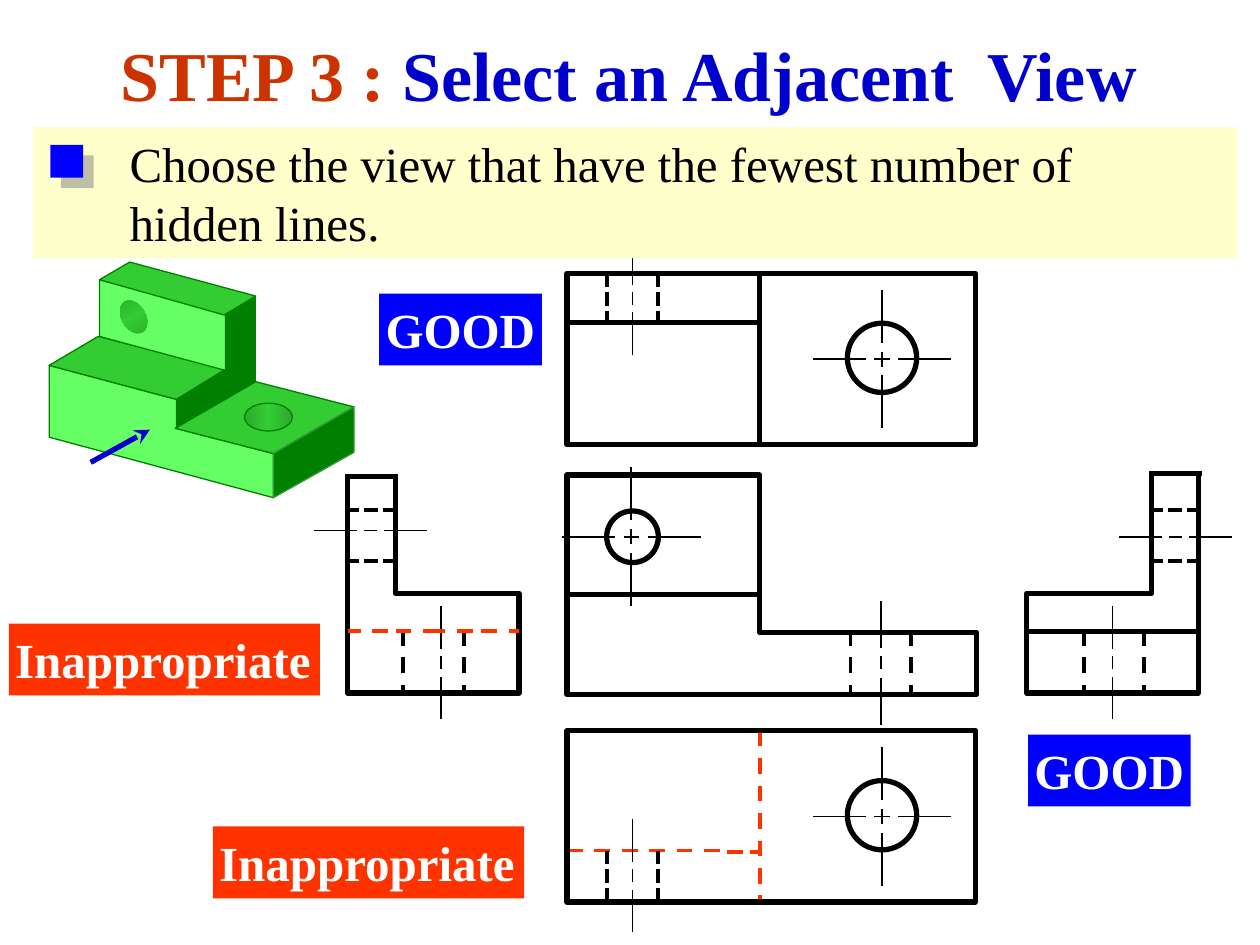
import copy

import lxml.etree
import pptx
import pptx.dml.color
import pptx.enum.dml
import pptx.enum.shapes
import pptx.enum.text
import pptx.oxml.ns
import pptx.util

Inches = pptx.util.Inches
Pt = pptx.util.Pt
qn = pptx.oxml.ns.qn
KIND = pptx.enum.shapes.MSO_SHAPE
FONT = "Times New Roman"
BLACK, WHITE, RED, BLUE, NAVY = "000000", "FFFFFF", "FF3300", "0000FF", "0000CC"
DARK, MID, LIGHT, EDGE = "008000", "33CC33", "66FF66", "339933"
SMALL, LARGE = (0.05, 0.11, 0.45), (0.06, 0.13, 0.55)


def color(code):
    return pptx.dml.color.RGBColor.from_string(code)


def paint(shape, fill=None, edge=None, width=3):
    shape.shadow.inherit = False
    if fill:
        shape.fill.solid()
        shape.fill.fore_color.rgb = color(fill)
    else:
        shape.fill.background()
    if edge:
        shape.line.color.rgb = color(edge)
        shape.line.width = Pt(width)
    else:
        shape.line.fill.background()
    return shape


def solid(slide, kind, box, **style):
    return paint(slide.shapes.add_shape(kind, *map(Inches, box)), **style)


def outline(slide, points, close=True, **style):
    spots = [(Inches(x), Inches(y)) for x, y in points]
    builder = slide.shapes.build_freeform(*spots[0])
    builder.add_line_segments(spots[1:], close=close)
    return paint(builder.convert_to_shape(), **style)


def frame(slide, left, top, right, bottom):
    outline(slide, [(left, bottom), (left, top), (right, top), (right, bottom)],
            edge=BLACK)


def line(slide, x1, y1, x2, y2, code=BLACK, width=3.0, dash=False):
    link = slide.shapes.add_connector(
        pptx.enum.shapes.MSO_CONNECTOR.STRAIGHT, *map(Inches, (x1, y1, x2, y2)))
    link.line.color.rgb = color(code)
    link.line.width = Pt(width)
    if dash:
        link.line.dash_style = pptx.enum.dml.MSO_LINE.DASH
    lxml.etree.SubElement(link._element.spPr, qn("a:effectLst"))
    return link


def axis(slide, x, y, size, across=False):
    core, gap, reach = size
    for start, end in ((-core, core), (-gap, -reach), (reach, gap)):
        if across:
            line(slide, x + start, y, x + end, y, width=1)
        else:
            line(slide, x, y + start, x, y + end, width=1)


def cross(slide, x, y):
    axis(slide, x, y, LARGE)
    axis(slide, x, y, LARGE, across=True)


def ring(slide, x, y, size):
    solid(slide, KIND.OVAL, (x - size / 2, y - size / 2, size, size), edge=BLACK)


def ticks(slide, x, y, across=False, sign=1):
    for start, end in ((0, 0.11), (0.15, 0.26), (0.3, 0.4)):
        start, end = start * sign, end * sign
        if across:
            line(slide, x + start, y, x + end, y, width=2.25)
        else:
            line(slide, x, y + start, x, y + end, width=2.25)


def bore(slide, left, right, mid, size=SMALL):
    for x in (left, right):
        line(slide, x, 5, x, 5.49, width=2.25, dash=True)
    axis(slide, mid, 5.26, size)


def write(para, text, size, code, bold=False):
    run = para.add_run()
    run.text = text
    run.font.name = FONT
    run.font.size = Pt(size)
    run.font.bold = bold
    run.font.color.rgb = color(code)


def label(slide, text, left, top, width, fill):
    frame = solid(slide, KIND.RECTANGLE, (left, top, width, 0.57), fill=fill).text_frame
    frame.margin_left = frame.margin_right = Inches(0.05)
    frame.margin_top = frame.margin_bottom = Inches(0.05)
    frame.word_wrap = False
    frame.vertical_anchor = pptx.enum.text.MSO_ANCHOR.TOP
    para = frame.paragraphs[0]
    para.alignment = pptx.enum.text.PP_ALIGN.LEFT
    write(para, text, 28, WHITE, True)


def title(slide):
    head = slide.shapes.title
    head.left, head.top, head.width, head.height = map(Inches, (-0.01, 0.2, 10, 0.77))
    frame = head.text_frame
    frame.word_wrap = True
    frame.auto_size = pptx.enum.text.MSO_AUTO_SIZE.NONE
    frame.vertical_anchor = pptx.enum.text.MSO_ANCHOR.TOP
    para = frame.paragraphs[0]
    para.alignment = pptx.enum.text.PP_ALIGN.CENTER
    write(para, "STEP 3 : ", 40, "CC3300", True)
    write(para, "Select an Adjacent  View", 40, NAVY, True)


def front(slide):
    ring(slide, 5.02, 4.26, 0.41)
    outline(slide, [(4.5, 3.77), (4.5, 5.51), (7.75, 5.51), (7.75, 5.02),
                    (6.03, 5.02), (6.03, 3.77)], edge=BLACK)
    line(slide, 4.5, 4.72, 6.03, 4.72)
    bore(slide, 6.75, 7.23, 6.99, (0.05, 0.12, 0.49))
    cross(slide, 5.01, 4.26)


def plan(slide, top, edge):
    frame(slide, 4.5, top, 7.74, top + 1.36)
    for x in (4.82, 5.22):
        ticks(slide, x, edge)
    axis(slide, 5.02, edge + 0.2, SMALL)
    ring(slide, 7, top + 0.67, 0.55)
    cross(slide, 7, top + 0.68)


def side(slide, back, step, face, hole, sign):
    outline(slide, [(step, 3.76), (step, 4.71), (face, 4.71), (face, 5.5),
                    (back, 5.5), (back, 3.76)], close=False, edge=BLACK)
    for y in (4.05, 4.45):
        ticks(slide, back - 0.02 * sign, y, True, sign)
    axis(slide, back + 0.18 * sign, hole, SMALL, across=True)


def hollow(slide, box, turn=0, **style):
    oval = solid(slide, KIND.OVAL, box, **style)
    oval.rotation = turn
    oval.fill.gradient()
    oval.fill.gradient_angle = 0
    stops = oval.fill.gradient_stops
    for stop, place, code in zip(stops, (0, 0.5), ("2BAB2B", MID)):
        stop.position = place
        stop.color.rgb = color(code)
    row = oval._element.spPr.find(".//" + qn("a:gsLst"))
    last = copy.deepcopy(row[0])
    last.set("pos", "100000")
    row.append(last)


def block(slide):
    faces = [
        (DARK, None, [(1.39, 3.4), (1.39, 3.16), (1.79, 2.93), (1.79, 2.48),
                      (2.03, 2.35), (2.03, 3.03)]),
        (LIGHT, DARK, [(2.17, 3.95), (0.39, 3.47), (0.39, 2.9), (1.4, 3.17),
                       (1.4, 3.4), (2.17, 3.6)]),
        (MID, DARK, [(0.39, 2.9), (0.78, 2.67), (1.79, 2.93), (1.4, 3.17)]),
        (LIGHT, DARK, [(1.79, 2.94), (0.79, 2.67), (0.79, 2.22), (1.79, 2.49)]),
        (MID, DARK, [(1.39, 3.4), (2.17, 3.6), (2.81, 3.23), (2.03, 3.03)]),
        (DARK, EDGE, [(2.17, 3.6), (2.17, 3.95), (2.81, 3.59), (2.81, 3.23)]),
        (MID, DARK, [(2.03, 2.35), (1.03, 2.08), (0.79, 2.22), (1.78, 2.5)]),
    ]
    for fill, edge, points in faces:
        outline(slide, points, fill=fill, edge=edge, width=0.75)
    arrow = line(slide, 0.72, 3.67, 1.19, 3.41, NAVY)
    lxml.etree.SubElement(arrow.line._get_or_add_ln(), qn("a:tailEnd"), type="stealth")
    hollow(slide, (0.92, 2.42, 0.28, 0.19), 60)
    hollow(slide, (1.94, 3.2, 0.38, 0.22), edge=DARK, width=0.75)


def banner(slide):
    solid(slide, KIND.RECTANGLE, (0.26, 1.01, 9.56, 1.04), fill="FFFFCC")
    box = slide.shapes.add_textbox(*map(Inches, (0.93, 1.01, 7.76, 1.04)))
    box.text_frame.word_wrap = False
    para = box.text_frame.paragraphs[0]
    write(para, "Choose the view that have the fewest number of", 28, BLACK)
    para.add_line_break()
    write(para, "hidden lines.", 28, BLACK)
    mark = solid(slide, KIND.RECTANGLE, (0.4, 1.15, 0.26, 0.26), fill=BLUE)
    shade = lxml.etree.SubElement(
        mark._element.spPr.find(qn("a:effectLst")), qn("a:outerShdw"),
        blurRad="0", dist=str(Pt(8.5)), dir="2700000", algn="ctr", rotWithShape="0")
    tone = lxml.etree.SubElement(shade, qn("a:srgbClr"), val="808080")
    lxml.etree.SubElement(tone, qn("a:alpha"), val="50000")


def main():
    deck = pptx.Presentation()
    deck.slide_width, deck.slide_height = Inches(10), Inches(7.5)
    slide = deck.slides.add_slide(deck.slide_layouts[5])
    title(slide)
    front(slide)
    label(slide, "GOOD", 3.01, 2.33, 1.29, BLUE)
    line(slide, 6.03, 5.8, 6.03, 7.16, RED, 2.25, True)
    line(slide, 4.5, 2.56, 6.03, 2.56)
    line(slide, 6.03, 2.17, 6.03, 3.53)
    plan(slide, 2.17, 2.17)
    line(slide, 4.5, 6.75, 5.72, 6.75, RED, 2.25, True)
    for start, end in ((5.77, 5.9), (5.95, 6.04)):
        line(slide, start, 6.76, end, 6.76, RED, 2.25)
    label(slide, "Inappropriate", 1.69, 6.56, 2.47, RED)
    block(slide)
    plan(slide, 5.8, 6.75)
    line(slide, 8.14, 5.01, 9.51, 5.01)
    bore(slide, 8.6, 9.08, 8.83)
    line(slide, 9.54, 3.76, 9.12, 3.76)
    side(slide, 9.51, 9.14, 8.15, 4.26, -1)
    bore(slide, 3.2, 3.68, 3.5)
    side(slide, 2.76, 3.14, 4.12, 4.21, 1)
    line(slide, 3.16, 3.78, 2.75, 3.78)
    for start, end in ((3.08, 2.76), (3.14, 3.45), (3.82, 4.12), (3.75, 3.45)):
        line(slide, start, 5.01, end, 5.01, RED, 2.25, True)
    label(slide, "Inappropriate", 0.07, 4.95, 2.47, RED)
    label(slide, "GOOD", 8.16, 5.83, 1.29, BLUE)
    banner(slide)
    deck.save("out.pptx")


if __name__ == "__main__":
    main()
